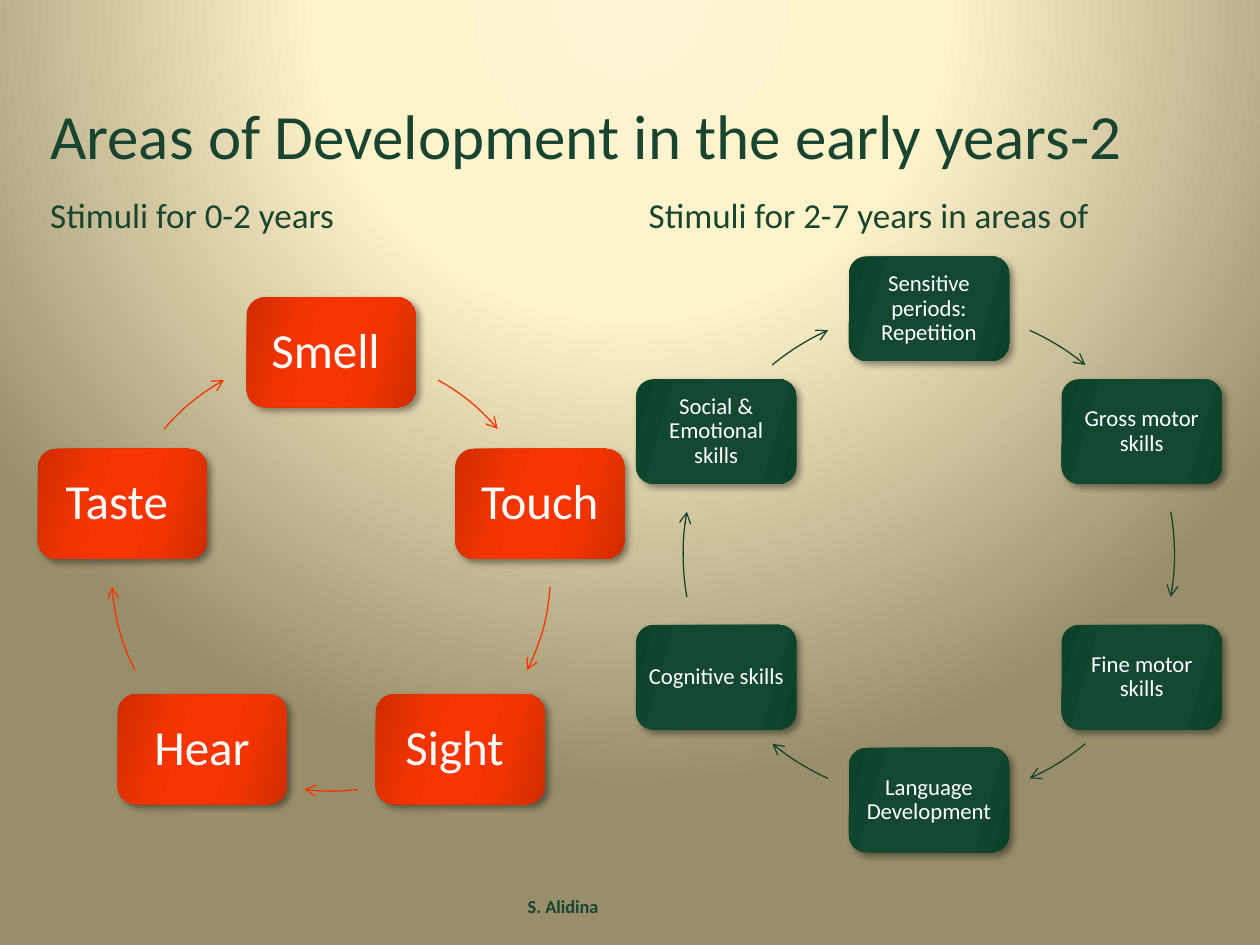
import math
from dataclasses import dataclass

from lxml import etree
from pptx import Presentation
from pptx.dml.color import RGBColor
from pptx.enum import shapes, text
from pptx.oxml.ns import nsdecls, qn
from pptx.util import Pt


@dataclass(frozen=True)
class Theme:
    font: str = "Calibri"
    ink: str = "194431"
    white: str = "FFFFFF"
    red: str = "F83500"
    title_size: float = 36
    heading_size: float = 20
    footer_size: float = 10.5
    sense_size: float = 28
    skill_size: float = 13
    line_width: float = 0.75
    background: tuple = ((0, "FFF4D2"), (40, "FFF3C9"), (100, "988E6A"))
    red_fill: tuple = ((0, "D02D00"), (30, "F13400"), (45, "F83500"),
                       (55, "F83500"), (73, "F13400"), (100, "D02D00"))
    green_fill: tuple = ((0, "0C422A"), (30, "124830"), (45, "154832"),
                         (55, "154831"), (73, "124830"), (100, "0C422A"))


@dataclass(frozen=True)
class Cycle:
    """A ring of boxes, clockwise from the top; arrows are (start, end) degrees from east."""
    labels: tuple
    arrows: tuple
    center: tuple
    radius: float
    box: tuple
    inset: float
    size: float
    stops: tuple
    line: str


THEME = Theme()

SENSES = Cycle(
    labels=("Smell ", "Touch ", "Sight ", "Hear", "Taste "),
    arrows=((-60.8, -40.6), (4, 26.7), (83, 97), (153.3, 176), (220.6, 240.8)),
    center=(189.2, 326.7), radius=125.4, box=(96.6, 62.8), inset=8.6,
    size=THEME.sense_size, stops=THEME.red_fill, line=THEME.red)

SKILLS = Cycle(
    labels=("Sensitive periods: Repetition", "Gross motor skills", "Fine motor skills",
            "Language Development", "Cognitive skills", "Social & Emotional skills"),
    arrows=((-65.8, -50.4), (-10, 10), (50.4, 65.8),
            (114.2, 129.6), (170, 190), (230.4, 245.8)),
    center=(530.8, 316.8), radius=140.4, box=(91.6, 59.8), inset=3.6,
    size=THEME.skill_size, stops=THEME.green_fill, line=THEME.ink)


def set_attrs(obj, values):
    for name, value in values.items():
        setattr(obj, name, value)


def set_gradient(fill, root, stops, direction):
    """Give fill the colour stops; direction is the a:lin or a:path element as text."""
    fill.gradient()
    old = root.find(".//" + qn("a:gradFill"))
    marks = "".join(f'<a:gs pos="{pos * 1000}"><a:srgbClr val="{color}"/></a:gs>'
                    for pos, color in stops)
    new = etree.fromstring(f'<a:gradFill {nsdecls("a")} rotWithShape="1">'
                           f"<a:gsLst>{marks}</a:gsLst>{direction}</a:gradFill>")
    old.getparent().replace(old, new)


def write(sp, content, size, color, frame=None, paragraph=None, bold=False):
    tf = sp.text_frame
    set_attrs(tf, {"word_wrap": True, "vertical_anchor": text.MSO_ANCHOR.MIDDLE,
                   **(frame or {})})
    p = tf.paragraphs[0]
    set_attrs(p, paragraph or {})
    r = p.add_run()
    r.text = content
    set_attrs(r.font, {"name": THEME.font, "size": Pt(size), "bold": bold})
    r.font.color.rgb = RGBColor.from_string(color)


def add_text(slide, content, bounds, size, **formats):
    sp = slide.shapes.add_textbox(*map(Pt, bounds))
    write(sp, content, size, THEME.ink, **formats)


def add_shadow(sp):
    sp.shadow.inherit = False
    effects = sp._element.spPr.find(qn("a:effectLst"))
    effects.append(etree.fromstring(
        f'<a:outerShdw {nsdecls("a")} blurRad="{Pt(4)}" dist="{Pt(3)}" dir="2700000" '
        'algn="br" rotWithShape="0"><a:srgbClr val="000000"><a:alpha val="40000"/>'
        "</a:srgbClr></a:outerShdw>"))


def add_box(group, label, center, cycle):
    (x, y), (w, h) = center, cycle.box
    sp = group.shapes.add_shape(shapes.MSO_SHAPE.ROUNDED_RECTANGLE,
                                *map(Pt, (x - w / 2, y - h / 2, w, h)))
    set_gradient(sp.fill, sp._element.spPr, cycle.stops,
                 '<a:lin ang="960000" scaled="0"/>')
    sp.line.fill.background()
    add_shadow(sp)
    sides = ("left", "top", "right", "bottom")
    write(sp, label, cycle.size, THEME.white,
          frame={f"margin_{side}": Pt(cycle.inset) for side in sides},
          paragraph={"alignment": text.PP_ALIGN.CENTER, "line_spacing": 0.9})


def add_arc_arrow(group, start, end, cycle):
    (x, y), radius = cycle.center, cycle.radius
    sp = group.shapes.add_shape(
        shapes.MSO_SHAPE.ARC,
        *map(Pt, (x - radius, y - radius, 2 * radius, 2 * radius)))
    for i, angle in enumerate((start, end)):
        sp.adjustments[i] = angle % 360 * 0.6  # 60000 units a degree, scaled by 100000
    sp.fill.background()
    sp.line.color.rgb = RGBColor.from_string(cycle.line)
    sp.line.width = Pt(THEME.line_width)
    sp.shadow.inherit = False
    ln = sp._element.spPr.find(qn("a:ln"))
    etree.SubElement(ln, qn("a:tailEnd"), type="arrow")


def add_cycle(slide, cycle):
    group = slide.shapes.add_group_shape()
    step = 2 * math.pi / len(cycle.labels)
    x, y = cycle.center
    for i, (label, arrow) in enumerate(zip(cycle.labels, cycle.arrows)):
        turn = i * step
        center = (x + cycle.radius * math.sin(turn), y - cycle.radius * math.cos(turn))
        add_box(group, label, center, cycle)
        add_arc_arrow(group, *arrow, cycle)


def main():
    prs = Presentation()
    prs.slide_width, prs.slide_height = Pt(720), Pt(540)
    s = prs.slides.add_slide(prs.slide_layouts[6])
    set_gradient(s.background.fill, s._element, THEME.background,
                 '<a:path path="circle"><a:fillToRect l="50000" t="-80000" '
                 'r="50000" b="180000"/></a:path>')

    add_text(s, "S. Alidina", (294.5, 506.2, 321.8, 23), THEME.footer_size, bold=True)
    add_text(s, "Areas of Development in the early years-2", (21.6, 18, 676.8, 84.2),
             THEME.title_size, frame={"vertical_anchor": text.MSO_ANCHOR.BOTTOM},
             paragraph={"space_before": Pt(4)})
    for cycle in (SENSES, SKILLS):
        add_cycle(s, cycle)
    for left, heading in ((21.6, "Stimuli for 0-2 years"),
                          (363.6, "Stimuli for 2-7 years in areas of")):
        add_text(s, heading, (left, 102.2, 334.8, 40.3), THEME.heading_size,
                 paragraph={"space_before": Pt(6)})
    prs.save("out.pptx")


if __name__ == "__main__":
    main()
